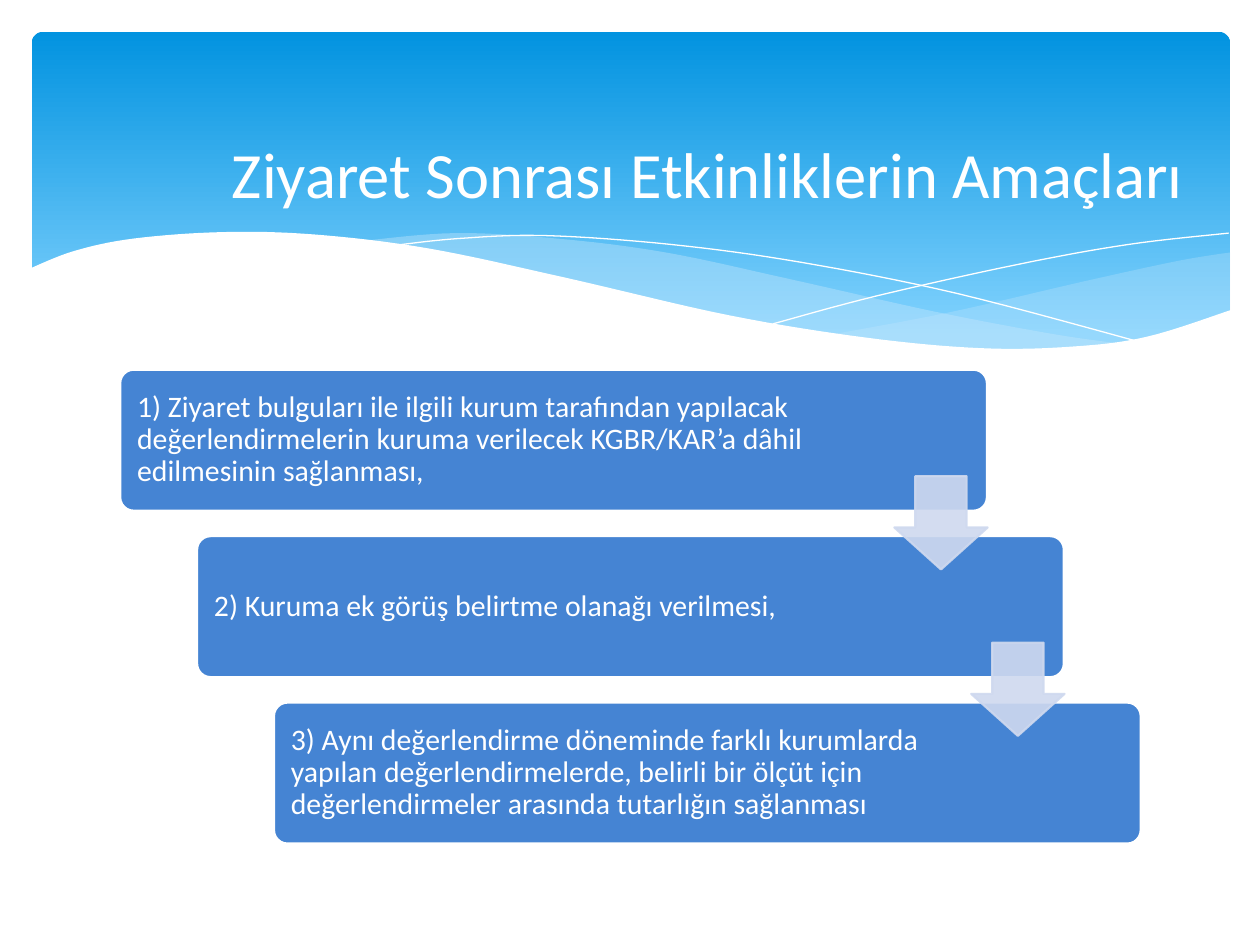
from dataclasses import dataclass

from lxml.etree import SubElement
from pptx import Presentation
from pptx.dml.color import RGBColor
from pptx.enum.shapes import MSO_SHAPE as Preset
from pptx.enum.text import MSO_ANCHOR as Anchor, PP_ALIGN as Align
from pptx.oxml.ns import qn
from pptx.util import Cm, Pt


@dataclass(frozen=True)
class Theme:
    font: str = "Calibri"
    white: str = "FFFFFF"
    sky_top: str = "0293E0"
    sky_bottom: str = "83D3FE"
    wave: str = "C6E7FC"
    card: str = "4584D3"
    arrow: str = "CFD9EF"
    title_size: float = 36.9
    card_size: float = 17


@dataclass(frozen=True)
class Box:
    """A region in centimetres."""
    left: float
    top: float
    width: float
    height: float

    def inner(self, left, top, width, height):
        return Box(self.left + left, self.top + top, width, height)

    def lengths(self):
        return [Cm(n) for n in (self.left, self.top, self.width, self.height)]


THEME = Theme()
TITLE_LAYOUT = 5

# Curve knots, in centimetres from the banner's top left corner
RIGHT_WAVE = [
    [(24.16, 4.45), (23.11, 4.62), (21.23, 5.03), (18.49, 5.66), (16.15, 6.1)],
    [(16.15, 6.1), (17.63, 6.27), (19.76, 6.43), (21.51, 6.32), (22.94, 6.05),
     (24.16, 5.64)],
]
LONG_WAVE = [
    [(6.63, 4.22), (8.53, 4.06), (10.59, 4.17), (12.78, 4.45), (15.34, 5),
     (18.19, 5.64), (20.62, 6.1), (22.05, 6.3)],
    [(22.05, 6.3), (20.14, 6.43), (17.7, 6.32), (15.06, 5.92), (12.83, 5.46),
     (10.77, 5), (8.56, 4.52), (6.63, 4.22)],
]
FALLING_LINE = [[(7.21, 4.32), (8.59, 4.17), (10.36, 4.11), (12.9, 4.29),
                 (15.52, 4.65), (18.67, 5.28), (22.4, 6.27)]]
RISING_LINE = [[(14.94, 5.89), (17.02, 5.33), (19.84, 4.7), (22.1, 4.29),
                (24.13, 4.06)]]
WHITE_WAVE = [
    [(-0.05, 4.78), (0.86, 4.42), (2.06, 4.17), (3.86, 4.04), (5.72, 4.09),
     (8, 4.37), (10.72, 4.95), (14.07, 5.72), (16.84, 6.17), (19.13, 6.38),
     (20.95, 6.35), (22.48, 6.15), (24.18, 5.61)],
    [(24.18, 7.72), (-0.05, 7.72)],
]

# Card text with the space kept free at its right, in centimetres
STEPS = [
    ("1) Ziyaret bulguları ile ilgili kurum tarafından yapılacak değerlendirmelerin "
     "kuruma verilecek KGBR/KAR’a dâhil edilmesinin sağlanması,", 3.2),
    ("2) Kuruma ek görüş belirtme olanağı verilmesi,", 3.66),
    ("3) Aynı değerlendirme döneminde farklı kurumlarda yapılan değerlendirmelerde, "
     "belirli bir ölçüt için değerlendirmeler arasında tutarlığın sağlanması", 3.66),
]


def color(value):
    return RGBColor.from_string(value)


def paint(shape, fill=None, line=None, width=0, opacity=100):
    shape.shadow.inherit = False
    for part, value in ((shape.fill, fill), (shape.line.fill, line)):
        if value:
            part.solid()
            part.fore_color.rgb = color(value)
        else:
            part.background()
    if line:
        shape.line.width = Pt(width)
    if opacity < 100:
        for tint in shape.element.spPr.iter(qn("a:srgbClr")):
            SubElement(tint, qn("a:alpha"), val=str(opacity * 1000))


def add_preset(page, preset, box, *adjustments):
    shape = page.shapes.add_shape(preset, *box.lengths())
    for index, value in enumerate(adjustments):
        shape.adjustments[index] = value
    return shape


def write(shape, text, size, align, **frame_format):
    frame = shape.text_frame
    frame.text = text
    for name, value in {"word_wrap": True, **frame_format}.items():
        setattr(frame, name, value)
    para = frame.paragraphs[0]
    para.alignment = align
    font = para.runs[0].font
    for name, value in {"name": THEME.font, "size": Pt(size)}.items():
        setattr(font, name, value)
    font.color.rgb = color(THEME.white)
    return para


def smooth(knots, parts=8):
    """Points of a Catmull-Rom curve through the knots."""
    padded = [knots[0], *knots, knots[-1]]
    points = [knots[0]]
    for a, b, c, d in zip(padded, padded[1:], padded[2:], padded[3:]):
        for step in range(1, parts + 1):
            t = step / parts
            points.append(tuple(
                (2 * q + (r - p) * t + (2 * p - 5 * q + 4 * r - s) * t ** 2
                 + (3 * q - p - 3 * r + s) * t ** 3) / 2
                for p, q, r, s in zip(a, b, c, d)))
    return points


def add_curve(page, box, edges, closed=True, **look):
    points = [(Cm(box.left + x), Cm(box.top + y))
              for edge in edges for x, y in smooth(edge)]
    builder = page.shapes.build_freeform(*points[0])
    builder.add_line_segments(points[1:], close=closed)
    paint(builder.convert_to_shape(), **look)


def add_banner(page, box):
    sky = add_preset(page, Preset.ROUNDED_RECTANGLE, box, 0.034)
    paint(sky)
    sky.fill.gradient()
    sky.fill.gradient_angle = 270
    stops = ((0, THEME.sky_top), (0.9, THEME.sky_bottom))
    for stop, (position, value) in zip(sky.fill.gradient_stops, stops):
        stop.position = position
        stop.color.rgb = color(value)
    add_curve(page, box, RIGHT_WAVE, fill=THEME.wave, opacity=29)
    add_curve(page, box, LONG_WAVE, fill=THEME.wave, opacity=40)
    for line in (FALLING_LINE, RISING_LINE):
        add_curve(page, box, line, closed=False, line=THEME.white)
    add_curve(page, box, WHITE_WAVE, fill=THEME.white)


def place_title(page, box, text):
    title = page.shapes.title
    title.element.getparent().append(title.element)  # in front of the banner
    title.left, title.top, title.width, title.height = box.lengths()
    write(title, text, THEME.title_size, Align.RIGHT,
          vertical_anchor=Anchor.BOTTOM, margin_bottom=Cm(0.15))


def add_staircase(page, box, steps):
    """Cards stepping down to the right, joined by arrows."""
    card_width, card_height, arrow_size = 17.5, 2.87, 1.88
    gaps = len(steps) - 1
    shift_x = (box.width - card_width) / gaps
    shift_y = (box.height - card_height) / gaps
    for index, (text, free_right) in enumerate(steps):
        place = box.inner(index * shift_x, index * shift_y, card_width, card_height)
        card = add_preset(page, Preset.ROUNDED_RECTANGLE, place, 0.1)
        paint(card, THEME.card, THEME.white, 2)
        para = write(card, text, THEME.card_size, Align.LEFT,
                     vertical_anchor=Anchor.MIDDLE,
                     margin_left=Cm(0.27), margin_right=Cm(free_right))
        para.line_spacing = 0.9
    for index in range(gaps):
        place = box.inner(card_width - arrow_size + index * shift_x,
                          2.16 + index * shift_y, arrow_size, arrow_size)
        arrow = add_preset(page, Preset.DOWN_ARROW, place, 0.55, 0.45)
        paint(arrow, THEME.arrow, THEME.arrow, 1.25, opacity=90)


def main():
    deck = Presentation()
    deck.slide_width, deck.slide_height = Cm(25.4), Cm(19.05)
    page = deck.slides.add_slide(deck.slide_layouts[TITLE_LAYOUT])
    add_banner(page, Box(0.64, 0.64, 24.16, 6.86))
    place_title(page, Box(1.27, 0.94, 22.86, 3.48),
                "Ziyaret Sonrası Etkinliklerin Amaçları")
    add_staircase(page, Box(2.41, 7.44, 20.6, 9.58), STEPS)
    deck.save("out.pptx")


if __name__ == "__main__":
    main()
